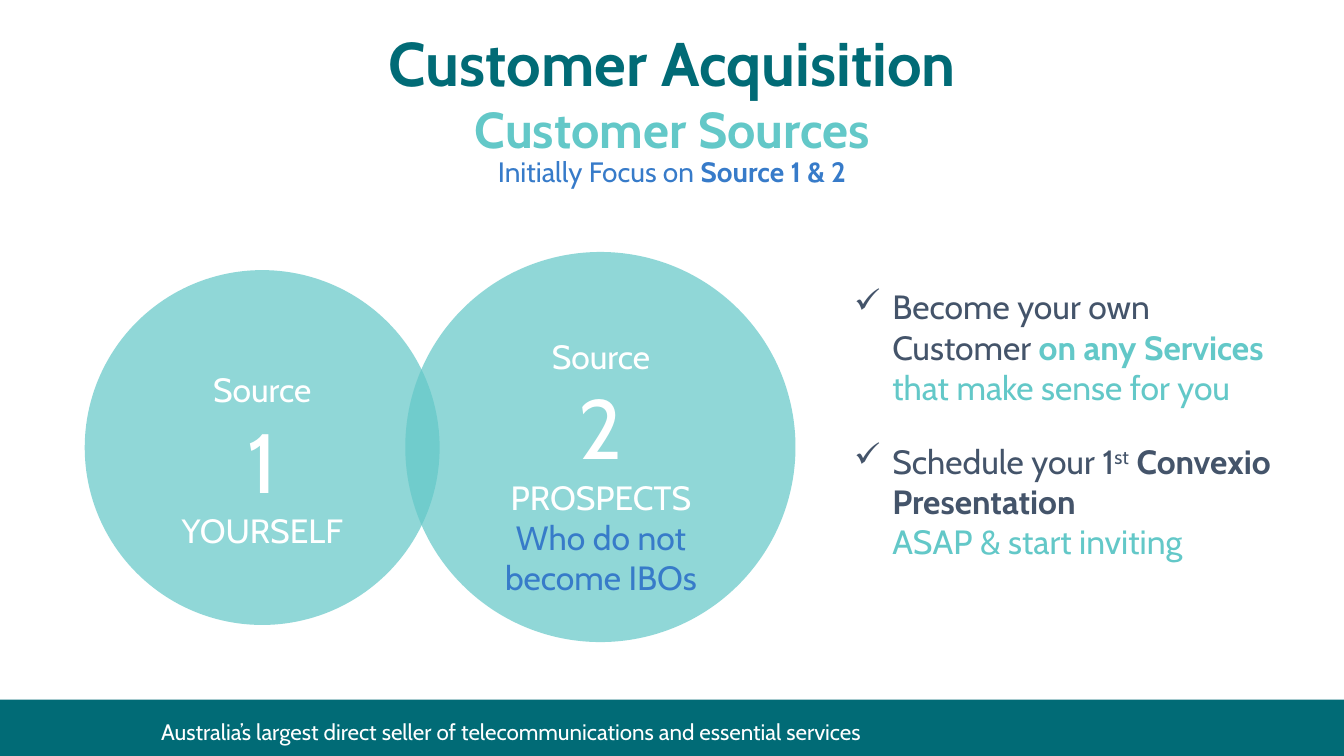
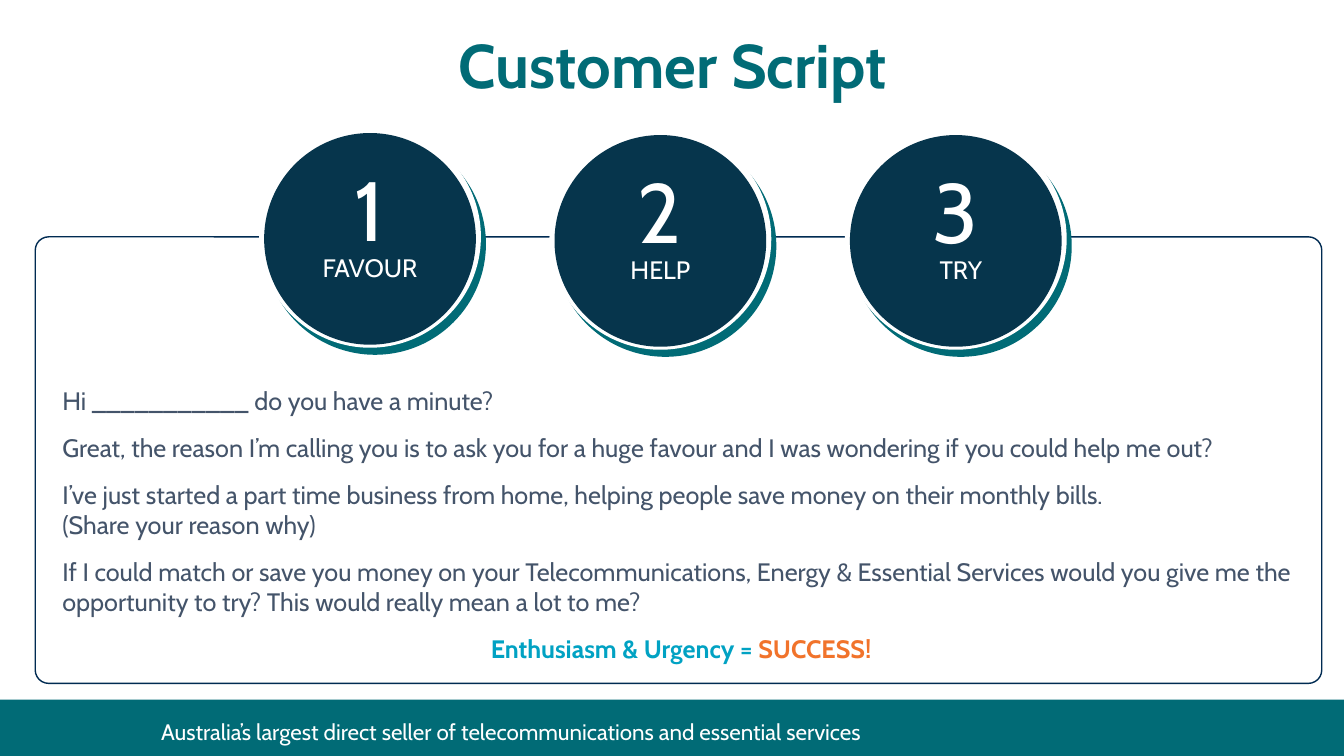
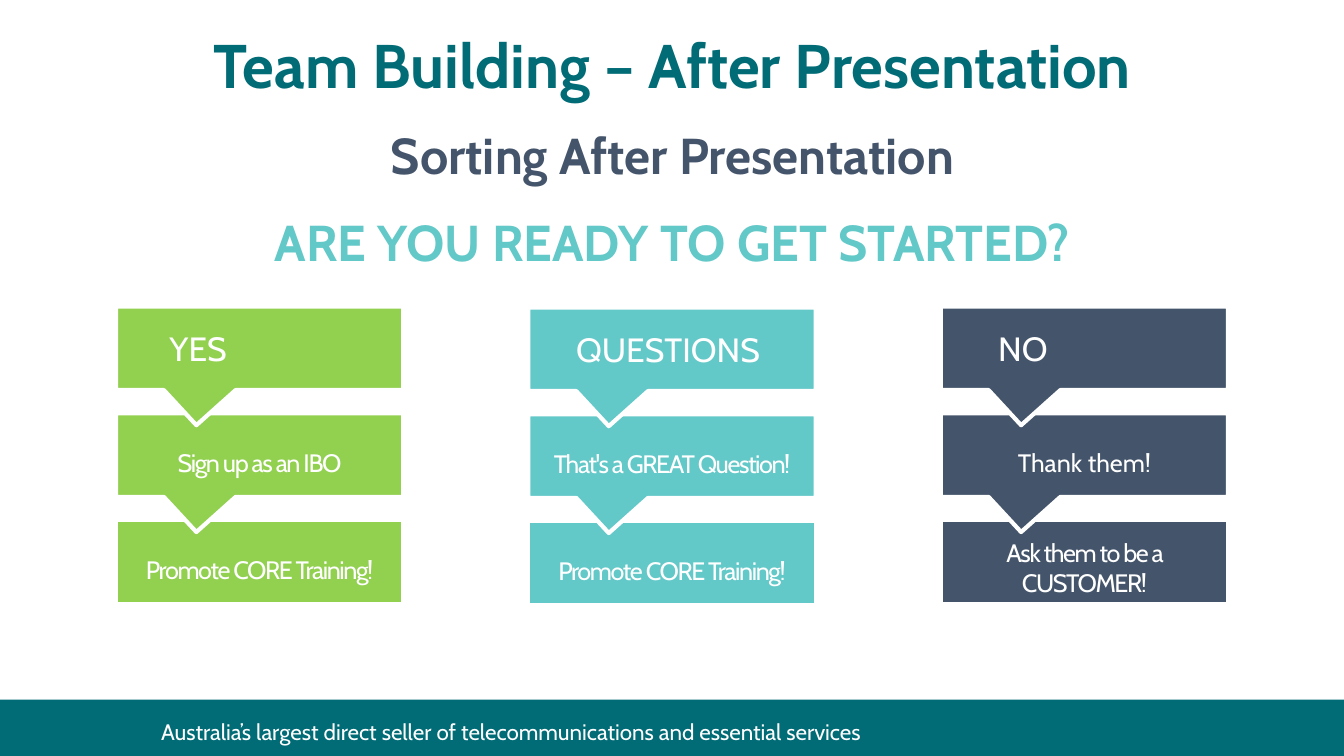
from dataclasses import dataclass

from lxml import etree
from pptx import Presentation
from pptx.dml.color import RGBColor
from pptx.enum.shapes import MSO_SHAPE
from pptx.enum.text import MSO_ANCHOR, PP_ALIGN
from pptx.oxml.ns import qn
from pptx.util import Inches, Pt

RECT = MSO_SHAPE.RECTANGLE
ROUNDED = MSO_SHAPE.ROUNDED_RECTANGLE
OVAL = MSO_SHAPE.OVAL
CALLOUT = MSO_SHAPE.RECTANGULAR_CALLOUT
LEFT, CENTER = PP_ALIGN.LEFT, PP_ALIGN.CENTER
TOP, MIDDLE = MSO_ANCHOR.TOP, MSO_ANCHOR.MIDDLE

FONT = "Cabin"
COLORS = {
    "white": "FFFFFF",
    "teal": "016B76",
    "aqua": "63C8C8",
    "slate": "44546A",
    "blue": "377BC9",
    "navy": "06354C",
    "outline": "002B52",
    "cyan": "01A2C3",
    "orange": "F1732B",
    "green": "92D050",
}
FOOTER = "Australia’s largest direct seller of telecommunications and essential services"
INSETS = (0.1, 0.05, 0.1, 0.05)
TIGHT_INSETS = (0.05, 0.05, 0.05, 0.05)


@dataclass
class Run:
    text: str
    size: float
    color: str = "white"
    bold: bool = False
    raised: bool = False
    tight: bool = False


@dataclass
class Para:
    runs: list[Run]
    align: PP_ALIGN = CENTER
    before: float = 0
    after: float = 0
    spacing: float = 1.0
    bullet: str = ""


@dataclass
class Source:
    circle: tuple[float, float, float]
    label_at: tuple[float, float]
    number: str
    name: list[Run]


@dataclass
class Badge:
    left: float
    top: float
    number: str
    label: str
    shift: float = 0


@dataclass
class Step:
    text: str
    insets: tuple[float, float, float, float] = (0.04, 0.2, 0.04, 0.05)
    size: float = 18
    tight: bool = True


@dataclass
class Column:
    top: float
    color: str
    steps: list[Step]


def rgb(name: str) -> RGBColor:
    return RGBColor.from_string(COLORS[name])


def add_bullet(p, mark: str) -> None:
    pPr = p._p.get_or_add_pPr()
    pPr.set("marL", str(Inches(0.38)))
    pPr.set("indent", str(-Inches(0.38)))
    etree.SubElement(pPr, qn("a:buChar")).set("char", mark)


def add_run(p, run: Run) -> None:
    formats = {"name": FONT, "size": Pt(run.size), "bold": run.bold}
    for i, line in enumerate(run.text.split("\n")):
        if i:
            p.add_line_break()
        if not line:
            continue
        r = p.add_run()
        r.text = line
        for name, value in formats.items():
            setattr(r.font, name, value)
        r.font.color.rgb = rgb(run.color)
        if run.raised:
            r.font._element.set("baseline", "30000")
        if run.tight:
            r.font._element.set("spc", "-100")


def fill_text(tf, paras: list[Para], insets=INSETS, anchor=TOP) -> None:
    sides = ("margin_left", "margin_top", "margin_right", "margin_bottom")
    formats = {"word_wrap": True, "vertical_anchor": anchor}
    formats.update(zip(sides, map(Inches, insets)))
    for name, value in formats.items():
        setattr(tf, name, value)
    for i, para in enumerate(paras):
        p = tf.add_paragraph() if i else tf.paragraphs[0]
        formats = {
            "alignment": para.align,
            "space_before": Pt(para.before if i else 0),
            "space_after": Pt(para.after),
            "line_spacing": para.spacing,
        }
        for name, value in formats.items():
            setattr(p, name, value)
        if para.bullet:
            add_bullet(p, para.bullet)
        for run in para.runs:
            add_run(p, run)


def add_text(s, at, paras: list[Para], insets=INSETS, anchor=TOP) -> None:
    box = s.shapes.add_textbox(*map(Inches, at))
    fill_text(box.text_frame, paras, insets, anchor)


def add_shape(s, kind, at, fill="", line="", width=1.0, alpha=100, adjust=()):
    sp = s.shapes.add_shape(kind, *map(Inches, at))
    sp.shadow.inherit = False
    if fill:
        sp.fill.solid()
        sp.fill.fore_color.rgb = rgb(fill)
    else:
        sp.fill.background()
    if alpha < 100:
        color = sp._element.spPr.find(".//" + qn("a:srgbClr"))
        etree.SubElement(color, qn("a:alpha")).set("val", str(alpha * 1000))
    if line:
        sp.line.color.rgb = rgb(line)
        sp.line.width = Pt(width)
    else:
        sp.line.fill.background()
    for i, value in enumerate(adjust):
        sp.adjustments[i] = value
    return sp


def new_slide(prs, top: float, height: float, title: list[Para]):
    s = prs.slides.add_slide(prs.slide_layouts[6])
    add_shape(s, RECT, (0, 6.94, 13.33, 0.56), "teal")
    add_text(s, (1.5, 7.08, 8.55, 0.37), [Para([Run(FOOTER, 16)], LEFT)])
    add_text(s, (0.19, top, 12.96, height), title, anchor=MIDDLE)
    return s


def heading(text: str, spacing: float = 1.0) -> Para:
    return Para([Run(text, 44, "teal", True)], spacing=spacing)


def subheading(text: str, color: str, before: float = 0) -> Para:
    return Para([Run(text, 36, color, True)], before=before)


def add_source(s, source: Source) -> None:
    paras = [
        Para([Run("Source", 24)]),
        Para([Run(source.number, 60)]),
        Para(source.name),
    ]
    add_text(s, (*source.label_at, 2.62, 1.91), paras, TIGHT_INSETS)


def sources_slide(prs) -> None:
    title = [heading("Customer Acquisition"), subheading("Customer Sources", "aqua")]
    s = new_slide(prs, 0.18, 1.46, title)
    sources = [
        Source((0.84, 2.68, 3.52), (1.29, 3.61), "1", [Run("YOURSELF", 24)]),
        Source((4.02, 2.5, 3.87), (4.65, 3.28), "2",
               [Run("PROSPECTS\n", 24), Run("Who do not become IBOs", 24, "blue")]),
    ]
    for source in sources:
        left, top, size = source.circle
        add_shape(s, OVAL, (left, top, size, size), "aqua", alpha=71)
    for source in sources:
        add_source(s, source)
    actions = [
        [
            Run("Become your own Customer ", 24, "slate"),
            Run("on any Services ", 24, "aqua", True),
            Run("that make sense for you", 24, "aqua"),
        ],
        [
            Run("Schedule your 1", 24, "slate"),
            Run("st", 24, "slate", raised=True),
            Run(" Convexio Presentation\n", 24, "slate", True),
            Run("ASAP & start inviting", 24, "aqua"),
        ],
    ]
    paras = [Para(runs, LEFT, 12, 12, bullet="✓") for runs in actions]
    add_text(s, (8.42, 2.79, 4.41, 3), paras, TIGHT_INSETS)
    focus = [Run("Initially Focus on ", 20, "blue"), Run("Source 1 & 2", 20, "blue", True)]
    add_text(s, (0, 1.43, 13.33, 0.54), [Para(focus)], (0.1, 0.1, 0.1, 0.1))


def add_badge(s, badge: Badge) -> None:
    x, y = badge.left, badge.top
    discs = [
        (0, 0, 2.2, "teal"),
        (-0.05, -0.07, 2.2, "white"),
        (0, 0, 2.1, "navy"),
    ]
    for dx, dy, size, color in discs:
        add_shape(s, OVAL, (x + dx, y + dy, size, size), color)
    number = [Para([Run(badge.number, 60)])]
    add_text(s, (x + 0.37, y + 0.05, 1.35, 1.38), number, anchor=MIDDLE)
    label = [Para([Run(badge.label, 18)])]
    add_text(s, (x + 0.08 + badge.shift, y + 1.13, 1.94, 0.4), label)


def script_slide(prs) -> None:
    s = new_slide(prs, 0.15, 1.05, [heading("Customer Script", 0.9)])
    add_shape(s, ROUNDED, (0.35, 2.35, 12.76, 4.43), line="outline", adjust=(0.03,))
    badges = [
        Badge(2.62, 1.32, "1", "FAVOUR"),
        Badge(5.5, 1.34, "2", "HELP"),
        Badge(8.43, 1.34, "3", "TRY", 0.05),
    ]
    for badge in badges:
        add_badge(s, badge)
    lines = [
        "Hi ___________ do you have a minute?",
        "Great, the reason I’m calling you is to ask you for a huge favour "
        "and I was wondering if you could help me out?",
        "I’ve just started a part time business from home, helping people "
        "save money on their monthly bills.\n(Share your reason why)",
        "If I could match or save you money on your Telecommunications, Energy "
        "& Essential Services would you give me the opportunity to try? "
        "This would really mean a lot to me?",
    ]
    paras = [Para([Run(line, 18, "slate")], LEFT, 6, 6) for line in lines]
    closing = [
        Run("Enthusiasm & Urgency = ", 18, "cyan", True),
        Run("SUCCESS!", 18, "orange", True),
    ]
    paras.append(Para(closing, before=6, after=6))
    add_text(s, (0.52, 3.77, 12.47, 2.89), paras)


def add_column(s, left: float, column: Column) -> None:
    last = len(column.steps) - 1
    for row in range(last, -1, -1):
        step = column.steps[row]
        tail = 0.5 if row == last else 0.92
        sp = add_shape(s, CALLOUT, (left, column.top + 1.06 * row, 2.85, 0.83),
                       column.color, "white", 3, adjust=(-0.22, tail))
        paras = [Para([Run(step.text, step.size, tight=step.tight)])]
        fill_text(sp.text_frame, paras, step.insets, MIDDLE)


def sorting_slide(prs) -> None:
    title = [
        heading("Team Building – After Presentation"),
        subheading("Sorting After Presentation", "slate", 16.5),
        subheading("ARE YOU READY TO GET STARTED?", "aqua", 18.5),
    ]
    s = new_slide(prs, 0.22, 2.52, title)
    narrow, wide = (0, 0.05, 1.22, 0.05), (0, 0.05, 0.08, 0.05)
    promote = Step("Promote CORE Training!")
    columns = [
        Column(3.04, "green", [
            Step("YES", narrow, 24, False),
            Step("Sign up as an IBO"),
            promote,
        ]),
        Column(3.05, "aqua", [
            Step("QUESTIONS", wide, 24, False),
            Step("That's a GREAT Question!"),
            promote,
        ]),
        Column(3.04, "slate", [
            Step("NO", narrow, 24, False),
            Step("Thank them!", (0.2, 0.2, 0.2, 0.05), tight=False),
            Step("Ask them to be a CUSTOMER!", (0.04, 0.16, 0.04, 0.05)),
        ]),
    ]
    for i, column in enumerate(columns):
        add_column(s, 1.15 + 4.09 * i, column)


def main() -> None:
    prs = Presentation()
    prs.slide_width = Inches(13.33)
    prs.slide_height = Inches(7.5)
    sources_slide(prs)
    script_slide(prs)
    sorting_slide(prs)
    prs.save("out.pptx")


if __name__ == "__main__":
    main()
